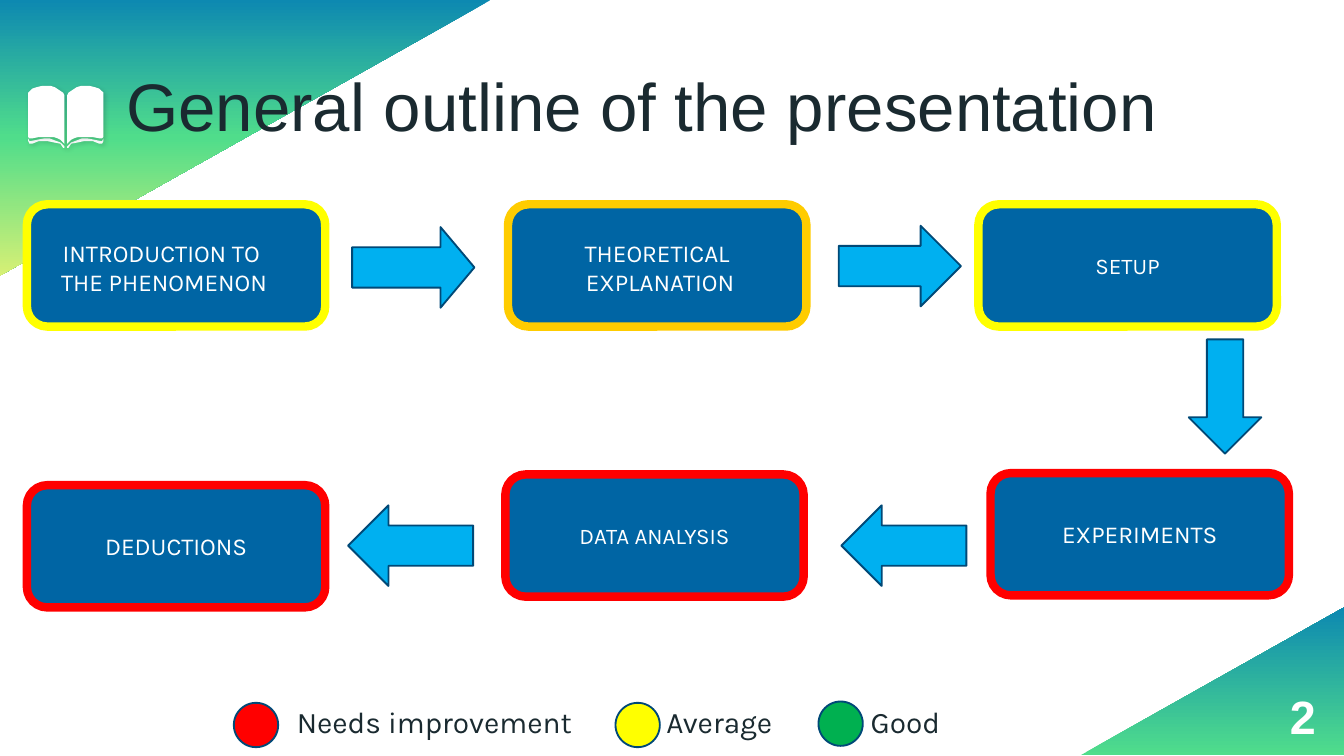
from lxml import etree
from pptx import Presentation
from pptx.dml.color import RGBColor
from pptx.enum.shapes import MSO_SHAPE
from pptx.enum.text import MSO_ANCHOR, PP_ALIGN
from pptx.oxml import parse_xml
from pptx.util import Inches, Pt

ROUND, ARROW = MSO_SHAPE.ROUNDED_RECTANGLE, MSO_SHAPE.RIGHT_ARROW
OVAL, WEDGE = MSO_SHAPE.OVAL, MSO_SHAPE.RIGHT_TRIANGLE
TOP, MID, BOTTOM = MSO_ANCHOR.TOP, MSO_ANCHOR.MIDDLE, MSO_ANCHOR.BOTTOM
LEFT, CENTER, RIGHT = PP_ALIGN.LEFT, PP_ALIGN.CENTER, PP_ALIGN.RIGHT
NS = "http://schemas.openxmlformats.org/drawingml/2006/main"

THEME = {
    "head": "Arial", "body": "Karla",
    "ink": "1A2A30", "white": "FFFFFF", "box": "0065A4",
    "arrow": "00B0F0", "edge": "004977",
    "red": "FF0000", "yellow": "FFFF00", "amber": "FFCC00", "green": "00B050",
    "title": 36, "page": 25, "legend": 16, "label": 13, "small": 12,
}

# Content
TITLE = "General outline of the presentation"
PAGE = "2"
BOX = (2.22, 0.91)
STEPS = [  # left, top, rim, size, label
    (0.2, 1.52, "yellow", "label", ""),
    (3.78, 1.52, "amber", "label", ""),
    (7.28, 1.52, "yellow", "small", "SETUP"),
    (7.37, 3.52, "red", "label", "EXPERIMENTS"),
    (3.76, 3.53, "red", "small", "DATA ANALYSIS"),
    (0.2, 3.61, "red", "label", "DEDUCTIONS"),
]
NOTES = [  # two-line labels laid over the first boxes
    (-0.42, ["INTRODUCTION TO ", "THE PHENOMENON"]),
    (3.27, ["THEORETICAL ", "EXPLANATION"]),
]
ARROWS = [  # place, turn, head length
    ((2.62, 1.69, 0.91, 0.6), 0, 0.42),
    ((6.24, 1.68, 0.91, 0.6), 0, 0.5),
    ((8.69, 2.68, 0.85, 0.54), 90, 0.5),
    ((6.26, 3.76, 0.93, 0.6), 180, 0.5),
    ((2.59, 3.76, 0.93, 0.6), 180, 0.5),
]
LEGEND = [  # dot left, dot top, colour, text left, text width, text
    (1.74, 5.23, "red", 2.11, 2.45, "Needs improvement"),
    (4.58, 5.23, "yellow", 4.86, 1.17, "Average"),
    (6.09, 5.22, "green", 6.38, 0.79, "Good"),
]
CORNERS = [  # place, turn, gradient stops
    ((0.8, -0.8, 2.05, 3.65), 90, [(0, "0D89B1"), (50, "50DD8B"), (100, "D6F075")]),
    ((8.47, 4.09, 1.1, 1.96), 270, [(0, "50DD8B"), (100, "0D89B1")]),
]
# Left half of the book, in hundredths of an inch
RIM = [(21, 103), (21, 105), (22, 107), (24, 107), (29, 105), (35, 105),
       (40, 106), (45, 107), (47, 110), (48, 110), (48, 109), (45, 106),
       (42, 105), (37, 103), (33, 103), (28, 104), (23, 105), (22, 105)]
LEAF = [(35, 64), (31, 64), (27, 65), (24, 66), (22, 68), (21, 69), (21, 102),
        (22, 103), (24, 103), (29, 102), (35, 102), (40, 102), (43, 103),
        (45, 104), (48, 107), (48, 71), (47, 69), (44, 67), (41, 65), (38, 64)]
SPINE = 49


def rgb(key):
    return RGBColor.from_string(THEME[key])


def place(nums):
    return [Inches(n) for n in nums]


def write(shape, lines, size, color="white", face="body", align=LEFT,
          anchor=TOP, pad=(0.1, 0.05), bold=False):
    frame = shape.text_frame
    frame.word_wrap = True
    frame.vertical_anchor = anchor
    frame.margin_left = frame.margin_right = Inches(pad[0])
    frame.margin_top = frame.margin_bottom = Inches(pad[1])
    frame.text = "\n".join(lines)
    for para in frame.paragraphs:
        para.alignment = align
        font = para.font
        font.name, font.size = THEME[face], Pt(THEME[size])
        font.color.rgb, font.bold = rgb(color), bold
    return frame


def draw(kind, spot, fill, line, width=1):
    shape = slide.shapes.add_shape(kind, *place(spot))
    shape.shadow.inherit = False
    shape.fill.solid()
    shape.fill.fore_color.rgb = rgb(fill)
    shape.line.color.rgb = rgb(line)
    shape.line.width = Pt(width)
    return shape


def label(spot, lines, size, **style):
    return write(slide.shapes.add_textbox(*place(spot)), lines, size, **style)


# Widescreen page, 16 by 9
deck = Presentation()
deck.slide_width = Inches(10)
deck.slide_height = Inches(10 * 9 / 16)
slide = deck.slides.add_slide(deck.slide_layouts[6])

# Gradient corners
for spot, turn, stops in CORNERS:
    wedge = slide.shapes.add_shape(WEDGE, *place(spot))
    wedge.rotation = turn
    wedge.shadow.inherit = False
    wedge.line.fill.background()
    marks = "".join(f'<a:gs pos="{pos * 1000}"><a:srgbClr val="{tone}"/></a:gs>'
                    for pos, tone in stops)
    wedge._element.spPr.insert(2, parse_xml(
        f'<a:gradFill xmlns:a="{NS}" rotWithShape="1"><a:gsLst>{marks}</a:gsLst>'
        '<a:lin ang="0" scaled="0"/></a:gradFill>'))

# Title and page number
frame = label((0.94, 0.66, 8.14, 0.43), [TITLE], "title", color="ink",
              face="head", anchor=BOTTOM, pad=(0, 0))
frame.paragraphs[0].line_spacing = 0.9
label((9.19, 5.11, 0.6, 0.43), [PAGE], "page", face="head", align=RIGHT,
      anchor=MID, pad=(0, 0), bold=True)

# Book icon: each half page and its mirror image
book = slide.shapes.add_group_shape()
for half in (RIM, LEAF):
    for pts in (half, [(2 * SPINE - x, y) for x, y in half]):
        pen = book.shapes.build_freeform(*pts[0], scale=Inches(0.01))
        pen.add_line_segments(pts[1:], close=True)
        part = pen.convert_to_shape()
        part.fill.solid()
        part.fill.fore_color.rgb = rgb("white")
        part.line.fill.background()
        part.shadow.inherit = False
        glow = etree.SubElement(
            part._element.spPr.find(f"{{{NS}}}effectLst"), f"{{{NS}}}outerShdw",
            blurRad=str(Pt(2.2)), dist=str(Pt(1.5)), dir="2700000")
        tone = etree.SubElement(glow, f"{{{NS}}}srgbClr", val=THEME["ink"])
        etree.SubElement(tone, f"{{{NS}}}alpha", val="20000")

# Steps
for left, top, rim, size, text in STEPS:
    box = draw(ROUND, (left, top, *BOX), "box", rim, 4.5)
    if text:
        write(box, [text], size, align=CENTER, anchor=MID)
for left, lines in NOTES:
    label((left, 1.67, 3.28, 0.64), lines, "label", align=CENTER, pad=(0.1, 0.1))

# Arrows between steps
for spot, turn, head in ARROWS:
    arrow = draw(ARROW, spot, "arrow", "edge")
    arrow.rotation = turn
    arrow.adjustments[1] = head

# Legend
for left, top, color, start, width, text in LEGEND:
    draw(OVAL, (left, top, 0.33, 0.33), color, "edge")
    label((start, 5.19, width, 0.37), [text], "legend", color="ink")

deck.save("out.pptx")
